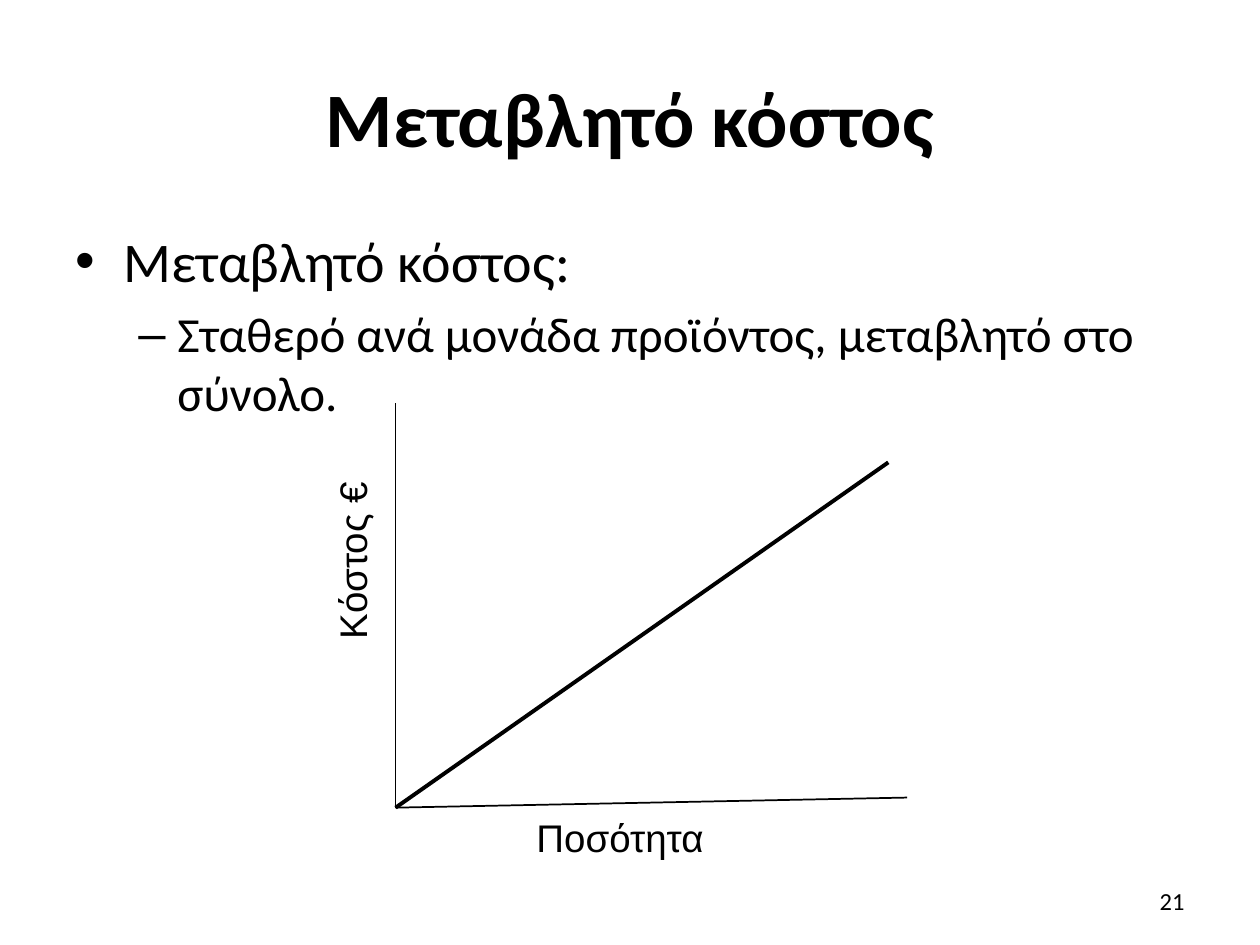
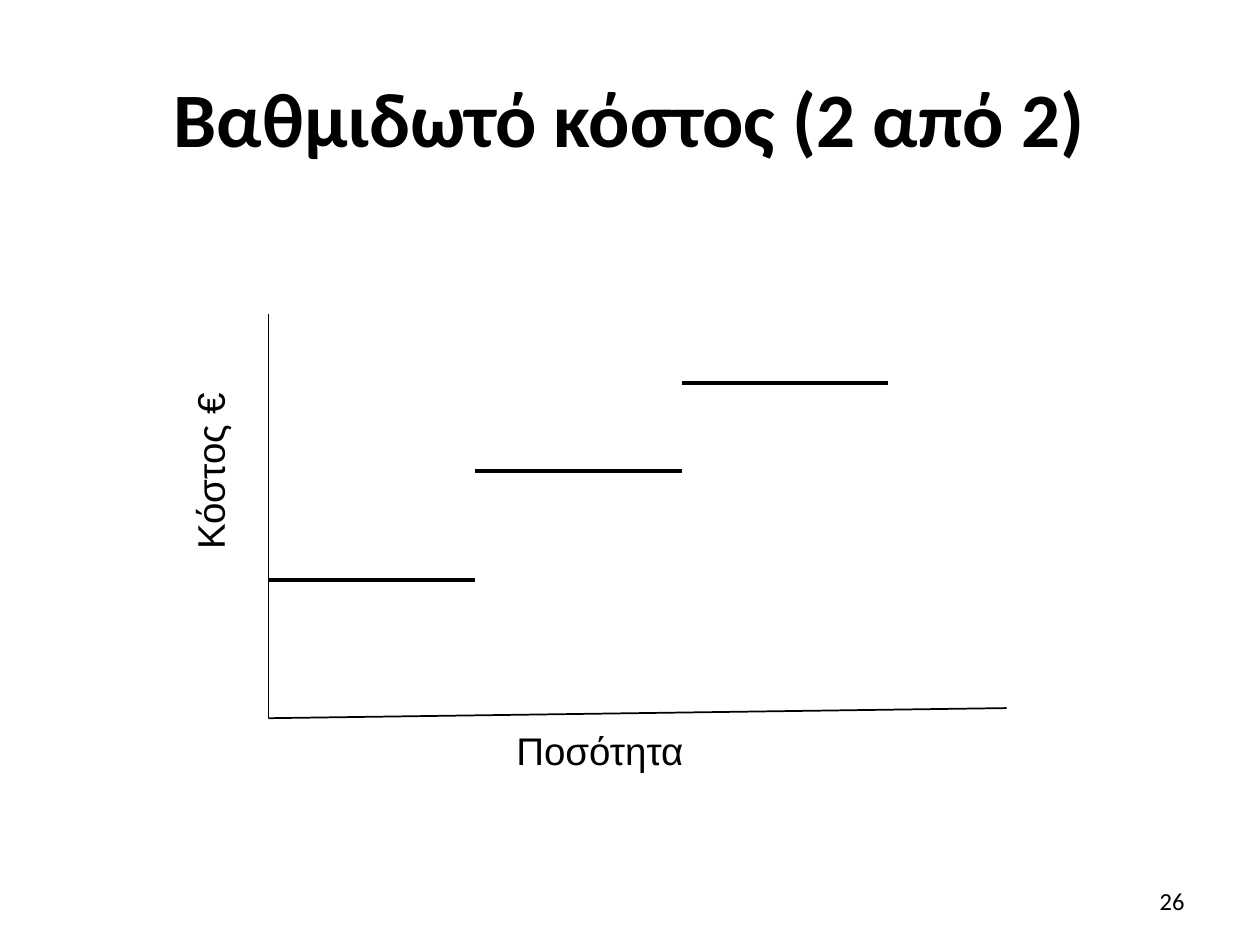
from dataclasses import dataclass

from lxml import etree
from pptx import Presentation
from pptx.dml.color import RGBColor
from pptx.enum.shapes import MSO_CONNECTOR
from pptx.enum.text import MSO_ANCHOR, MSO_AUTO_SIZE, PP_ALIGN
from pptx.oxml.ns import qn
from pptx.util import Inches, Pt

STRAIGHT = MSO_CONNECTOR.STRAIGHT
TOP, MIDDLE = MSO_ANCHOR.TOP, MSO_ANCHOR.MIDDLE
LEFT, CENTER, RIGHT = PP_ALIGN.LEFT, PP_ALIGN.CENTER, PP_ALIGN.RIGHT
GROW = MSO_AUTO_SIZE.SHAPE_TO_FIT_TEXT


@dataclass(frozen=True)
class Theme:
    ink: RGBColor = RGBColor(0, 0, 0)
    paper: RGBColor = RGBColor(255, 255, 255)
    text_font: str = "Calibri"
    label_font: str = "Arial"
    title_size: int = 44
    body_sizes: tuple = (32, 28)
    label_size: int = 22
    number_size: int = 14
    axis_width: float = 1
    cost_width: float = 2.25


theme = Theme()

# Bullet, left margin and hanging indent of each body level
BULLETS = [("•", 0.38, -0.38), ("–", 0.81, -0.31)]

SLIDES = [
    {
        "title": "Μεταβλητό κόστος",
        "number": "21",
        "body": ["Μεταβλητό κόστος:", "Σταθερό ανά μονάδα προϊόντος, μεταβλητό στο σύνολο."],
        "origin": (3.14, 6.41),
        "axis_length": 4.06,
        "cost_lines": [(3.14, 6.41, 7.05, 3.67)],
        "cost_label": (2.56, 3.2),
        "quantity_label": (4.16, 6.41),
    },
    {
        "title": "Βαθμιδωτό κόστος (2 από 2)",
        "number": "26",
        "body": [],
        "origin": (2.13, 5.7),
        "axis_length": 5.86,
        "cost_lines": [
            (2.13 + 1.64 * step, level, 2.13 + 1.64 * (step + 1), level)
            for step, level in enumerate((4.6, 3.74, 3.04))
        ],
        "cost_label": (1.43, 2.49),
        "quantity_label": (4, 5.72),
    },
]


def add_text(slide, box, lines, sizes, font, align=LEFT, anchor=TOP, bold=False, bullets=()):
    """Add a text box with one paragraph per line; bullets gives each its mark and indents."""
    shape = slide.shapes.add_textbox(*map(Inches, box))
    frame = shape.text_frame
    frame.word_wrap = True
    frame.vertical_anchor = anchor
    for index, (line, size) in enumerate(zip(lines, sizes)):
        paragraph = frame.add_paragraph() if index else frame.paragraphs[0]
        paragraph.alignment = align
        if bullets:
            mark, margin, indent = bullets[index]
            paragraph.level = index
            if index:
                paragraph.space_before = Pt(0.2 * size)
            properties = paragraph._p.get_or_add_pPr()
            properties.set("marL", str(Inches(margin)))
            properties.set("indent", str(Inches(indent)))
            etree.SubElement(properties, qn("a:buFont")).set("typeface", theme.label_font)
            etree.SubElement(properties, qn("a:buChar")).set("char", mark)
        run = paragraph.add_run()
        run.text = line
        run.font.name = font
        run.font.size = Pt(size)
        run.font.bold = bold
        run.font.color.rgb = theme.ink
    return shape


def add_line(slide, ends, width):
    line = slide.shapes.add_connector(STRAIGHT, *map(Inches, ends))
    line.line.color.rgb = theme.ink
    line.line.width = Pt(width)
    etree.SubElement(line.element.spPr, qn("a:effectLst"))


presentation = Presentation()
presentation.slide_width = Inches(10)
presentation.slide_height = Inches(7.5)
blank_layout = presentation.slide_layouts[6]

for content in SLIDES:
    slide = presentation.slides.add_slide(blank_layout)
    slide.background.fill.solid()
    slide.background.fill.fore_color.rgb = theme.paper

    add_text(slide, (0.5, 0.3, 9, 1.25), [content["title"]], [theme.title_size],
             theme.text_font, CENTER, MIDDLE, bold=True)
    if content["body"]:
        add_text(slide, (0.5, 1.75, 9, 4.95), content["body"], theme.body_sizes,
                 theme.text_font, bullets=BULLETS)

    # The quantity axis rises slightly to the right
    x, y = content["origin"]
    add_line(slide, (x, y, x + content["axis_length"], y - 0.08), theme.axis_width)
    add_line(slide, (x, y - 3.21, x, y), theme.axis_width)
    for ends in content["cost_lines"]:
        add_line(slide, ends, theme.cost_width)

    cost_label = add_text(slide, (*content["cost_label"], 0.57, 2.5), ["Κόστος €"],
                          [theme.label_size], theme.label_font, CENTER)
    cost_label.text_frame.auto_size = GROW
    cost_label.element.txBody.find(qn("a:bodyPr")).set("vert", "vert270")
    quantity_label = add_text(slide, (*content["quantity_label"], 1.63, 0.47), ["Ποσότητα"],
                              [theme.label_size], theme.label_font)
    quantity_label.text_frame.auto_size = GROW
    quantity_label.text_frame.word_wrap = False

    add_text(slide, (7.17, 6.95, 2.33, 0.4), [content["number"]], [theme.number_size],
             theme.text_font, RIGHT, MIDDLE)

presentation.save("out.pptx")
